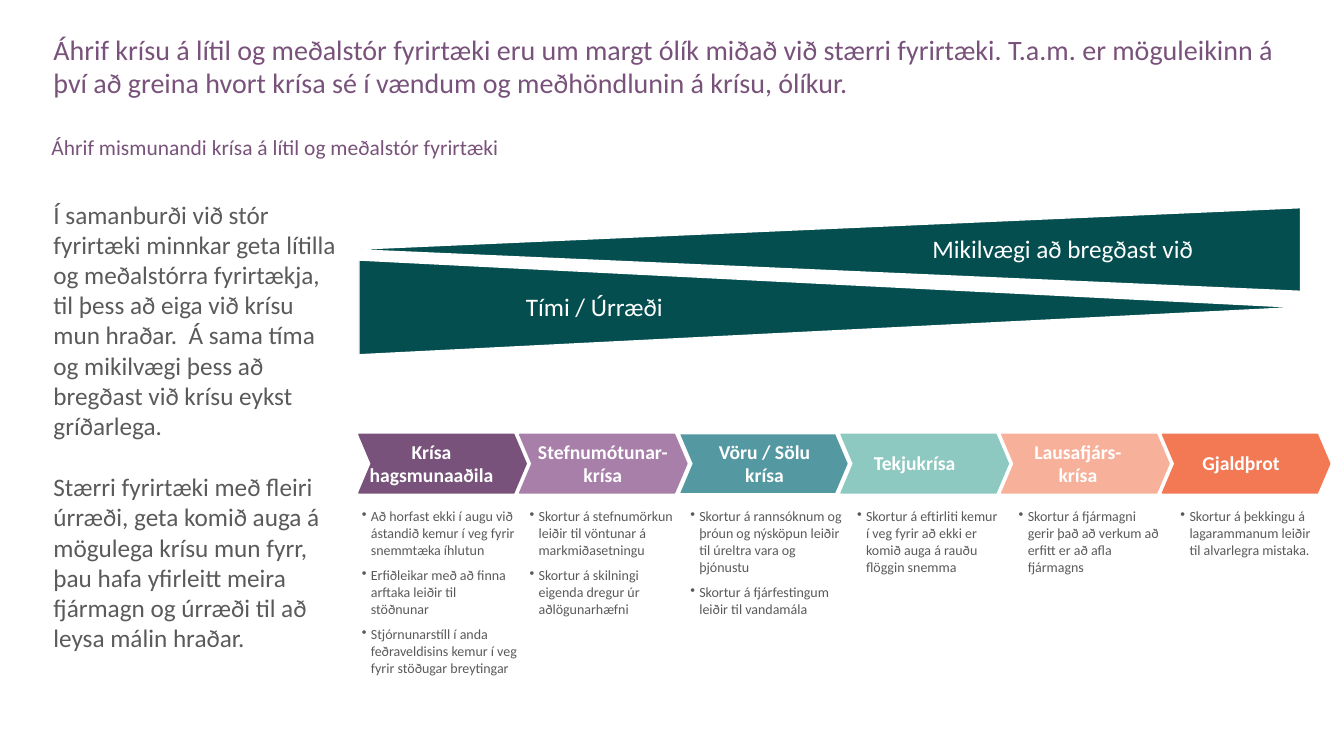
from dataclasses import dataclass

from lxml import etree
from pptx import Presentation
from pptx.dml.color import RGBColor
from pptx.enum import shapes, text
from pptx.oxml import ns
from pptx.util import Inches, Pt


@dataclass(frozen=True)
class Theme:
    font: str = "Calibri"
    purple: str = "79527B"
    grey: str = "595A59"
    teal: str = "044E4F"
    white: str = "FFFFFF"
    title: float = 20
    subtitle: float = 15.3
    body: float = 18
    phase: float = 14
    bullet: float = 10


@dataclass(frozen=True)
class Phase:
    name: str
    color: str
    outlined: bool
    label: tuple  # left offset from the chevron, width
    notes: tuple  # left offset from the chevron, width
    points: tuple


THEME = Theme()
TITLE = ("Áhrif krísu á lítil og meðalstór fyrirtæki eru um margt ólík miðað við stærri "
         "fyrirtæki. T.a.m. er möguleikinn á því að greina hvort krísa sé í vændum og "
         "meðhöndlunin á krísu, ólíkur.")
SUBTITLE = "Áhrif mismunandi krísa á lítil og meðalstór fyrirtæki"
BODY = (
    "Í samanburði við stór fyrirtæki minnkar geta lítilla og meðalstórra fyrirtækja, til þess "
    "að eiga við krísu mun hraðar.  Á sama tíma og mikilvægi þess að bregðast við krísu eykst "
    "gríðarlega.",
    "Stærri fyrirtæki með fleiri úrræði, geta komið auga á mögulega krísu mun fyrr, þau hafa "
    "yfirleitt meira fjármagn og úrræði til að leysa málin hraðar.",
)
PHASES = (
    Phase("Krísa hagsmunaaðila", "79527B", True, (-0.02, 1.48), (-0.07, 1.74), (
        "Að horfast ekki í augu við ástandið kemur í veg fyrir snemmtæka íhlutun",
        "Erfiðleikar með að finna arftaka leiðir til stöðnunar",
        "Stjórnunarstíll í anda feðraveldisins kemur í veg fyrir stöðugar breytingar")),
    Phase("Stefnumótunar-krísa", "A77FA9", True, (0.05, 1.55), (0, 1.74), (
        "Skortur á stefnumörkun leiðir til vöntunar á  markmiðasetningu",
        "Skortur á skilningi eigenda dregur úr aðlögunarhæfni")),
    Phase("Vöru / Sölu krísa", "5499A2", False, (0.19, 1.29), (0, 1.74), (
        "Skortur á rannsóknum og þróun og nýsköpun leiðir til úreltra vara og þjónustu",
        "Skortur á fjárfestingum leiðir til vandamála")),
    Phase("Tekjukrísa", "8DC9C0", True, (0.14, 1.18), (0.06, 1.6), (
        "Skortur á eftirliti kemur í veg fyrir að ekki er komið auga á rauðu flöggin snemma",)),
    Phase("Lausafjárs-krísa", "F7B19B", True, (0.18, 1.15), (0.07, 1.6), (
        "Skortur á fjármagni gerir það að verkum að erfitt er að afla fjármagns",)),
    Phase("Gjaldþrot", "F27954", True, (0.25, 1.06), (0.08, 1.6), (
        "Skortur á þekkingu á lagarammanum leiðir til alvarlegra mistaka.",)),
)


def place(shape, box):
    shape.left, shape.top, shape.width, shape.height = map(Inches, box)


def set_bullet(para, symbol=None, indent=0):
    """Give the paragraph a hanging bullet, or none at all."""
    props = para._p.get_or_add_pPr()
    props.set("marL", str(Inches(indent)))
    props.set("indent", str(-Inches(indent)))
    if symbol:
        tint = etree.SubElement(props, ns.qn("a:buClr"))
        etree.SubElement(tint, ns.qn("a:srgbClr"), val=THEME.grey)
        etree.SubElement(props, ns.qn("a:buChar"), char=symbol)
    else:
        etree.SubElement(props, ns.qn("a:buNone"))


def write(shape, lines, size, color, align=text.PP_ALIGN.LEFT, anchor=text.MSO_ANCHOR.TOP,
          gap=0, bold=False, symbol=None, indent=0, fit=text.MSO_AUTO_SIZE.NONE):
    frame = shape.text_frame
    frame.word_wrap = True
    frame.auto_size = fit
    frame.vertical_anchor = anchor
    for index, line in enumerate(lines):
        para = frame.add_paragraph() if index else frame.paragraphs[0]
        para.text = line
        set_bullet(para, symbol, indent)
        para.alignment = align
        para.space_before = Pt(gap if index else 0)
        para.font.name = THEME.font
        para.font.size = Pt(size)
        para.font.bold = bold
        para.font.color.rgb = RGBColor.from_string(color)


def add_text(page, box, lines, size, color, **style):
    label = page.shapes.add_textbox(*map(Inches, box))
    write(label, lines, size, color, **style)


def add_filled(page, kind, box, fill, line=None):
    shape = page.shapes.add_shape(kind, *map(Inches, box))
    shape.shadow.inherit = False
    shape.fill.solid()
    shape.fill.fore_color.rgb = RGBColor.from_string(fill)
    if line:
        shape.line.color.rgb = RGBColor.from_string(line)
        shape.line.width = Pt(1)
    else:
        shape.line.fill.background()
    return shape


def add_headings(page, box):
    left, top, width, height = box
    title, subtitle = page.shapes.title, page.placeholders[2]
    place(title, (left, top, width, height))
    write(title, [TITLE], THEME.title, THEME.purple)
    place(subtitle, (left - 0.02, top + 1.08, width + 0.02, 0.28))
    write(subtitle, [SUBTITLE], THEME.subtitle, THEME.purple)
    subtitle.text_frame.paragraphs[0].line_spacing = 0.7


def add_body(page, box):
    body = page.placeholders[1]
    place(body, box)
    write(body, BODY, THEME.body, THEME.grey, anchor=text.MSO_ANCHOR.MIDDLE, gap=22)


def add_wedge(page, box, rotation, caption, caption_box):
    """Lay a triangle on its side so that it fills the box."""
    left, top, width, height = box
    upright = (left + (width - height) / 2, top + (height - width) / 2, height, width)
    wedge = add_filled(page, shapes.MSO_SHAPE.ISOSCELES_TRIANGLE, upright,
                       THEME.teal, THEME.white)
    wedge.rotation = rotation
    dx, dy, caption_width, caption_height = caption_box
    add_text(page, (left + dx, top + dy, caption_width, caption_height), [caption],
             THEME.body, THEME.white, align=text.PP_ALIGN.CENTER,
             anchor=text.MSO_ANCHOR.MIDDLE)


def add_phases(page, box):
    left, top, width, height = box
    chevron_width = 1.66
    pitch = (width - chevron_width) / (len(PHASES) - 1)
    fit = text.MSO_AUTO_SIZE.SHAPE_TO_FIT_TEXT
    for index, phase in enumerate(PHASES):
        x = left + index * pitch
        # Chevron
        chevron = add_filled(page, shapes.MSO_SHAPE.CHEVRON, (x, top, chevron_width, height),
                             phase.color, phase.color if phase.outlined else None)
        chevron.adjustments[0] = 0.212
        # Phase name
        offset, label_width = phase.label
        add_text(page, (x + offset, top, label_width, 0.57), [phase.name], THEME.phase,
                 THEME.white, align=text.PP_ALIGN.CENTER, anchor=text.MSO_ANCHOR.MIDDLE,
                 bold=True, fit=fit)
        # Bullets below
        offset, notes_width = phase.notes
        add_text(page, (x + offset, top + 0.68, notes_width, 0.77), phase.points,
                 THEME.bullet, THEME.grey, gap=6, symbol="•", indent=0.09, fit=fit)


def main():
    deck = Presentation()
    deck.slide_width, deck.slide_height = Inches(13.33), Inches(7.5)
    page = deck.slides.add_slide(deck.slide_layouts.get_by_name("Two Content"))
    add_headings(page, (0.43, 0.27, 12.54, 0.99))
    add_body(page, (0.43, 1.79, 3.04, 4.87))
    add_wedge(page, (3.47, 2.06, 9.43, 0.83), 270, "Mikilvægi að bregðast við",
              (4.71, 0.2, 4.72, 0.41))
    add_wedge(page, (3.56, 2.58, 9.33, 0.94), 90, "Tími / Úrræði", (0, 0.23, 4.67, 0.47))
    add_phases(page, (3.56, 4.31, 9.63, 0.58))
    deck.save("out.pptx")


if __name__ == "__main__":
    main()
